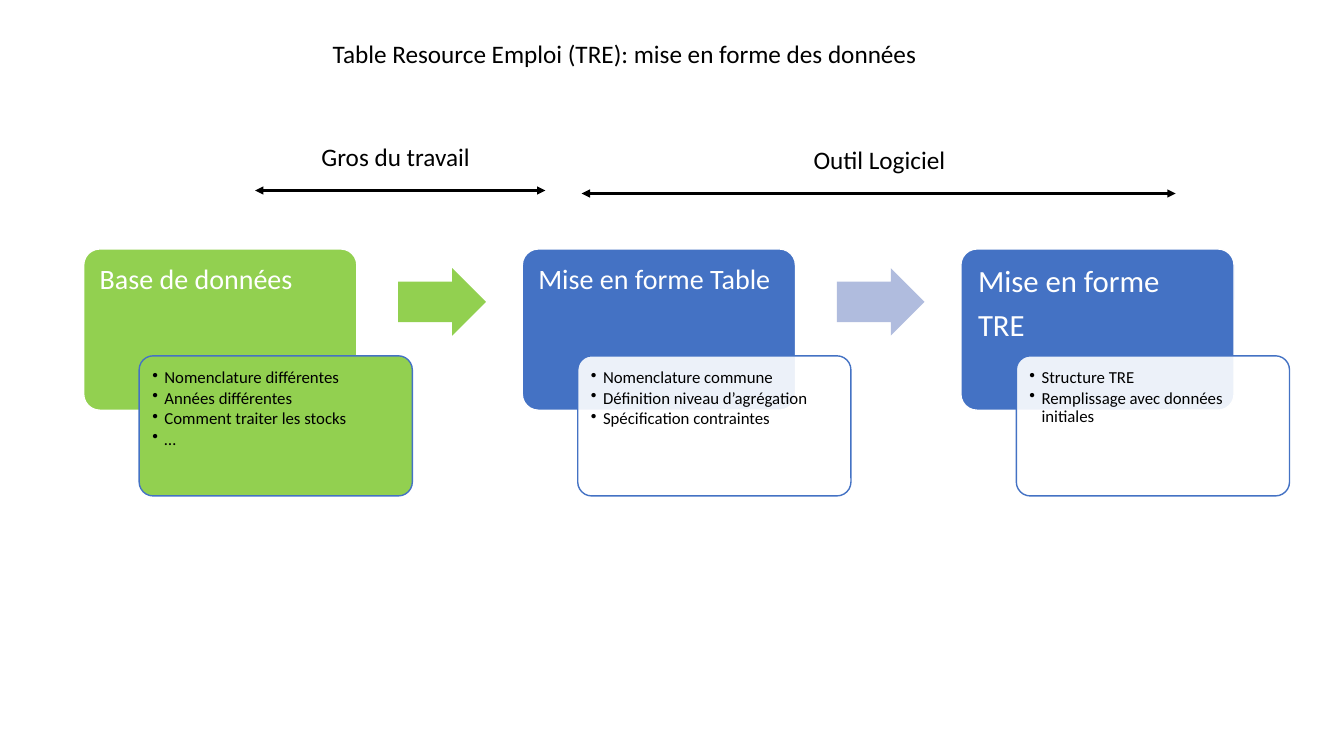
from dataclasses import dataclass

from lxml import etree
from pptx import Presentation
from pptx import util as u
from pptx.dml.color import RGBColor
from pptx.enum import shapes, text
from pptx.oxml.ns import qn

GREEN, BLUE, PALE_BLUE = "92D050", "4472C4", "B0BCDE"
WHITE, BLACK = "FFFFFF", "000000"
FIRST_LEFT, STEP_PITCH = 0.83, 4.35


@dataclass
class Step:
    heading: list[str]
    heading_size: int
    fill: str
    details: list[str]
    detail_fill: str
    detail_alpha: int = 100
    arrow: str | None = None


@dataclass
class Span:
    label: str
    label_left: float
    label_top: float
    start: float
    end: float
    y: float


STEPS = [
    Step(["Base de données"], 20, GREEN,
         ["Nomenclature différentes", "Années différentes",
          "Comment traiter les stocks", "…"], GREEN, arrow=GREEN),
    Step(["Mise en forme Table"], 20, BLUE,
         ["Nomenclature commune", "Définition niveau d’agrégation",
          "Spécification contraintes"], WHITE, 90, PALE_BLUE),
    Step(["Mise en forme", "TRE"], 22, BLUE,
         ["Structure TRE", "Remplissage avec données initiales"], WHITE, 90),
]
SPANS = [
    Span("Outil Logiciel", 7.97, 1.38, 5.77, 11.66, 1.92),
    Span("Gros du travail", 3.09, 1.35, 2.53, 5.41, 1.89),
]


def rgb(value: str) -> RGBColor:
    return RGBColor.from_string(value)


def add_run(p, words: str, size: float, color: str) -> None:
    r = p.add_run()
    r.text = words
    r.font.size = u.Pt(size)
    r.font.name = "Calibri"
    r.font.color.rgb = rgb(color)


def add_bullet(p) -> None:
    indent = u.Inches(0.12)
    pPr = p._p.get_or_add_pPr()
    pPr.set("marL", str(indent))
    pPr.set("indent", str(-indent))
    etree.SubElement(pPr, qn("a:buChar")).set("char", "•")


def write_lines(sp, lines: list[str], size: float, color: str, inset: float,
                spacing: float, bullets: bool = False) -> None:
    tf = sp.text_frame
    tf.word_wrap = True
    tf.vertical_anchor = text.MSO_ANCHOR.TOP
    tf.margin_left = tf.margin_right = u.Inches(inset)
    tf.margin_top = tf.margin_bottom = u.Inches(inset)
    for i, line in enumerate(lines):
        p = tf.add_paragraph() if i else tf.paragraphs[0]
        p.alignment = text.PP_ALIGN.LEFT
        p.line_spacing = 0.9
        p.space_after = u.Pt(size * spacing)
        if bullets:
            add_bullet(p)
        add_run(p, line, size, color)


def add_block(s, kind, left: float, top: float, width: float, height: float,
              fill: str, line: str | None = None, alpha: int = 100):
    sp = s.shapes.add_shape(kind, u.Inches(left), u.Inches(top),
                            u.Inches(width), u.Inches(height))
    sp.shadow.inherit = False
    sp.fill.solid()
    sp.fill.fore_color.rgb = rgb(fill)
    if alpha < 100:
        color = sp._element.spPr.find(qn("a:solidFill"))[0]
        etree.SubElement(color, qn("a:alpha")).set("val", str(alpha * 1000))
    if line:
        sp.line.color.rgb = rgb(line)
        sp.line.width = u.Pt(1)
    else:
        sp.line.fill.background()
    return sp


def add_step(s, step: Step, left: float) -> None:
    rounded = shapes.MSO_SHAPE.ROUNDED_RECTANGLE
    box = add_block(s, rounded, left, 2.47, 2.71, 1.6, step.fill, WHITE)
    box.adjustments[0] = 0.1
    write_lines(box, step.heading, step.heading_size, WHITE,
                step.heading_size * 0.0056, 0.35)

    card = add_block(s, rounded, left + 0.55, 3.53, 2.71, 1.39,
                     step.detail_fill, BLUE, step.detail_alpha)
    card.adjustments[0] = 0.1
    write_lines(card, step.details, 12, BLACK, 0.09, 0.15, bullets=True)

    if step.arrow:
        arrow = add_block(s, shapes.MSO_SHAPE.RIGHT_ARROW, left + 3.12, 2.66,
                          0.87, 0.67, step.arrow)
        arrow.adjustments[0] = 0.6
        arrow.adjustments[1] = 0.5


def add_span(s, span: Span) -> None:
    line = s.shapes.add_connector(
        shapes.MSO_CONNECTOR.STRAIGHT, u.Inches(span.start), u.Inches(span.y),
        u.Inches(span.end), u.Inches(span.y))
    line.line.color.rgb = rgb(BLACK)
    line.line.width = u.Pt(1.5)
    ln = line.line._get_or_add_ln()
    for end in ("a:headEnd", "a:tailEnd"):
        etree.SubElement(ln, qn(end)).set("type", "triangle")
    etree.SubElement(line._element.spPr, qn("a:effectLst"))

    label = s.shapes.add_textbox(u.Inches(span.label_left), u.Inches(span.label_top),
                                 u.Inches(1.72), u.Inches(0.4))
    label.text_frame.word_wrap = True
    add_run(label.text_frame.paragraphs[0], span.label, 18, BLACK)


def add_title(s, words: str) -> None:
    title = s.shapes.title
    title.left, title.top = u.Inches(3.2), u.Inches(0.33)
    title.width, title.height = u.Inches(7.66), u.Inches(0.4)
    tf = title.text_frame
    tf.word_wrap = True
    tf.auto_size = text.MSO_AUTO_SIZE.NONE
    tf.vertical_anchor = text.MSO_ANCHOR.TOP
    p = tf.paragraphs[0]
    p.alignment = text.PP_ALIGN.LEFT
    add_run(p, words, 18, BLACK)


def main() -> None:
    prs = Presentation()
    prs.slide_width, prs.slide_height = u.Inches(13.33), u.Inches(7.5)
    s = prs.slides.add_slide(prs.slide_layouts[5])

    # Title
    add_title(s, "Table Resource Emploi (TRE): mise en forme des données")

    # Process steps
    for i, step in enumerate(STEPS):
        add_step(s, step, FIRST_LEFT + i * STEP_PITCH)

    # Work phases above the steps
    for span in SPANS:
        add_span(s, span)

    prs.save("out.pptx")


if __name__ == "__main__":
    main()
